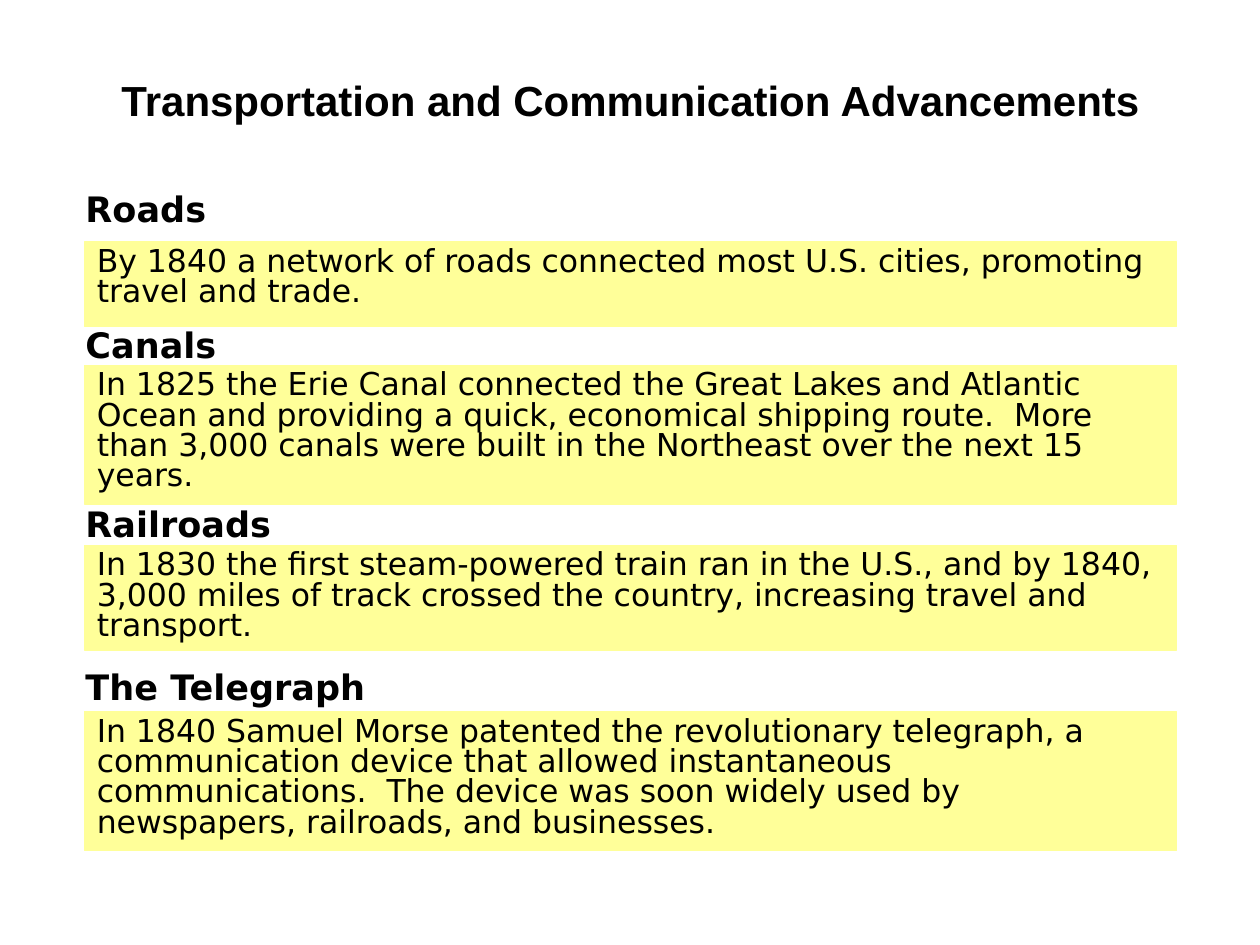
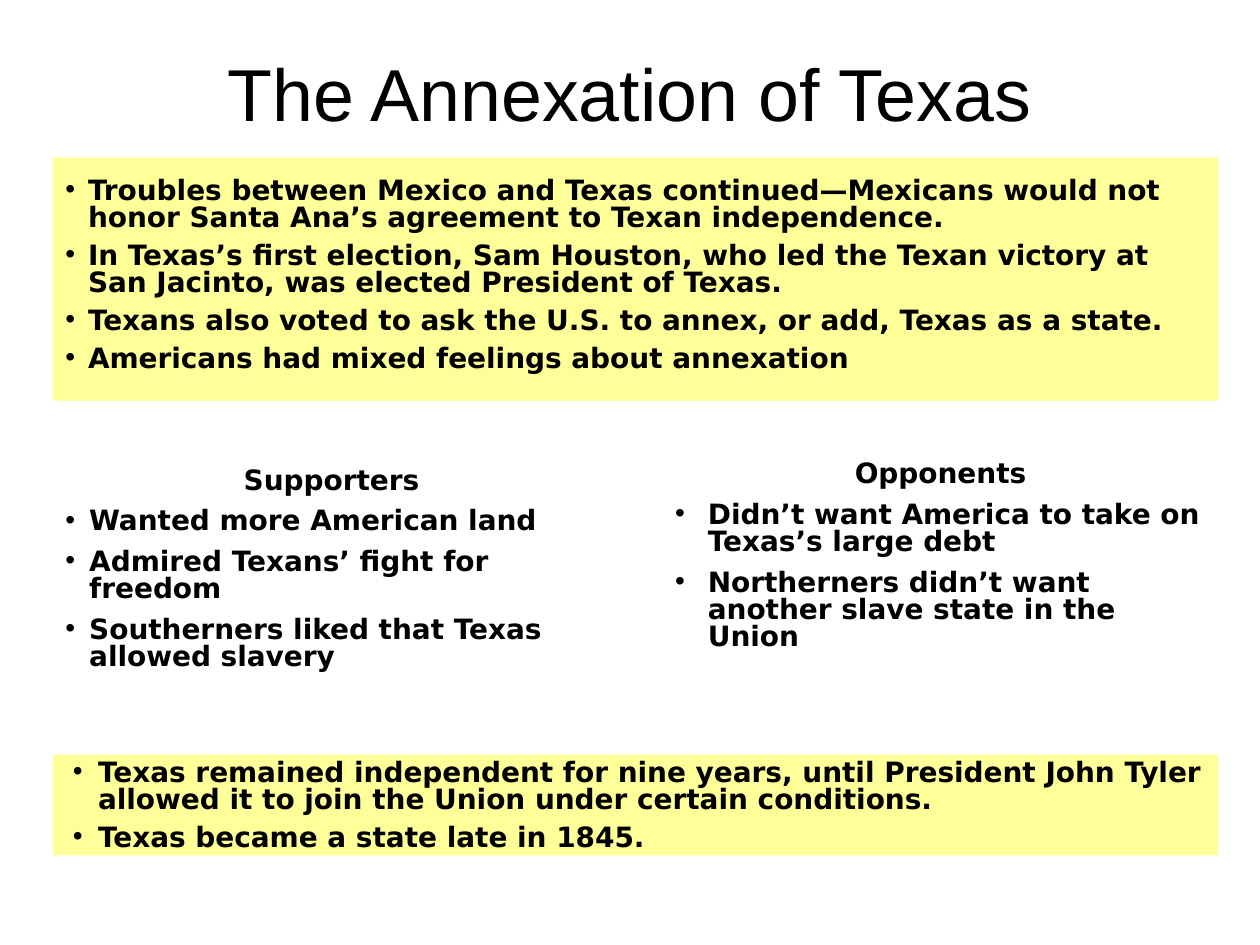
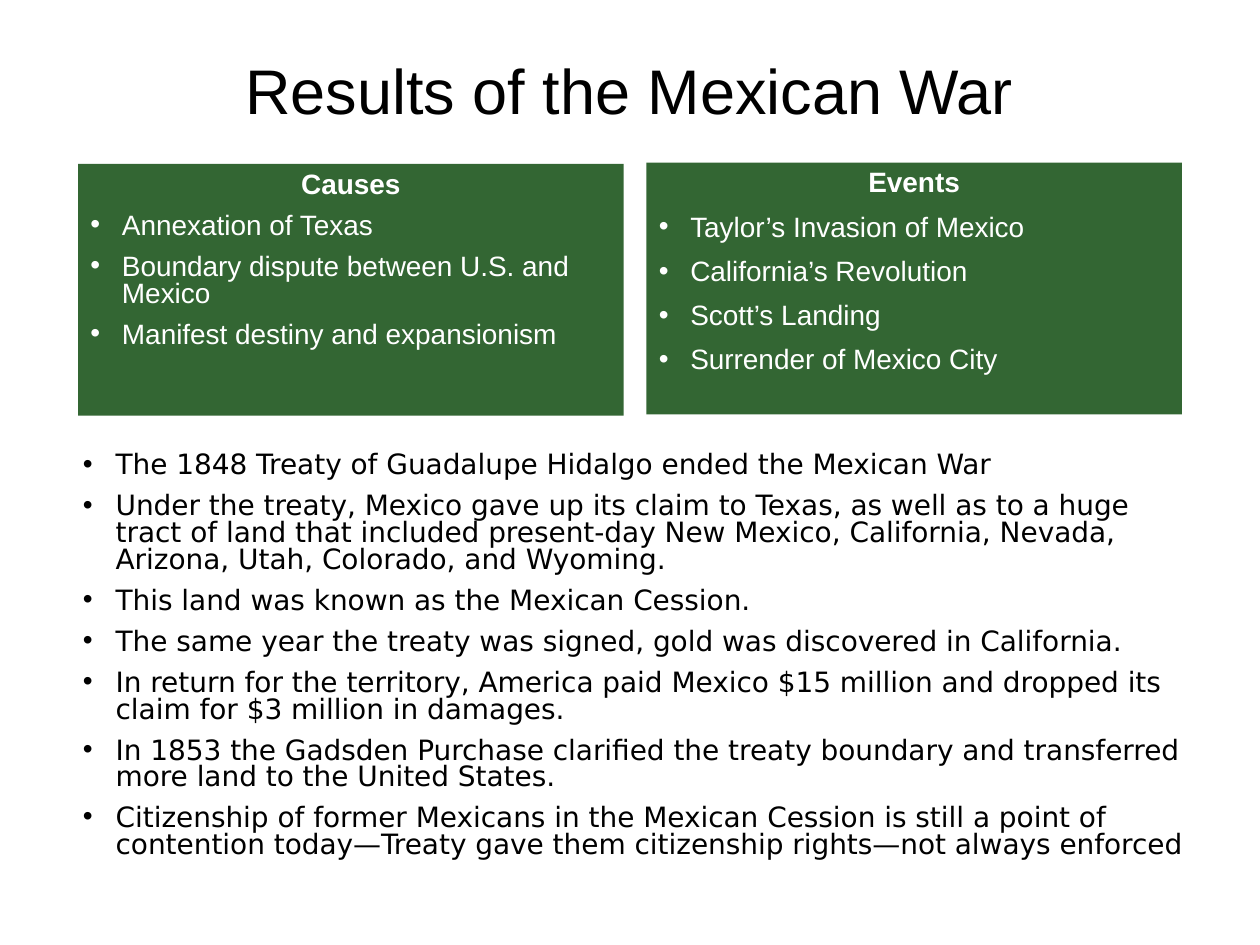
from dataclasses import dataclass

from lxml.etree import SubElement
from pptx import Presentation
from pptx.dml.color import RGBColor
from pptx.enum.shapes import MSO_SHAPE as Preset
from pptx.enum.text import MSO_ANCHOR as Anchor, PP_ALIGN as Align
from pptx.oxml.ns import qn
from pptx.util import Emu, Pt

EMU_PER_PX = 9144
BLACK = RGBColor(0, 0, 0)
WHITE = RGBColor(255, 255, 255)
YELLOW = RGBColor(0xFF, 0xFF, 0x99)
GREEN = RGBColor(0x33, 0x66, 0x33)
SANS = "DejaVu Sans"
ARIAL = "Arial"


@dataclass(frozen=True)
class Area:
    left: int
    top: int
    width: int
    height: int


@dataclass(frozen=True)
class Style:
    size: int
    font: str = SANS
    color: RGBColor = BLACK
    bold: bool = False
    align: Align = Align.LEFT
    line: float = 0.8
    gap: float = 0
    margin: int = 0
    hanging: int = 0
    bullet: bool = False


@dataclass(frozen=True)
class Line:
    text: str
    style: Style


@dataclass(frozen=True)
class Topic:
    heading: str
    heading_top: int
    body_top: int
    body_height: int
    body: str


def px(length: int) -> Emu:
    return Emu(length * EMU_PER_PX)


def write(shape, lines: list[Line], anchor: Anchor = Anchor.TOP) -> None:
    frame = shape.text_frame
    frame.word_wrap = True
    frame.vertical_anchor = anchor
    for index, line in enumerate(lines):
        style = line.style
        para = frame.add_paragraph() if index else frame.paragraphs[0]
        para.alignment = style.align
        para.line_spacing = style.line
        para.space_before = Pt(style.gap if index else 0)
        properties = para._p.get_or_add_pPr()
        properties.set("marL", str(px(style.margin)))
        properties.set("indent", str(px(-style.hanging)))
        if style.bullet:
            SubElement(properties, qn("a:buFont")).set("typeface", ARIAL)
            SubElement(properties, qn("a:buChar")).set("char", "•")
        span = para.add_run()
        span.text = line.text
        span.font.name = style.font
        span.font.size = Pt(style.size)
        span.font.bold = style.bold
        span.font.color.rgb = style.color


def add_text(page, area: Area, lines: list[Line], anchor: Anchor = Anchor.TOP) -> None:
    box = page.shapes.add_textbox(px(area.left), px(area.top), px(area.width), px(area.height))
    write(box, lines, anchor)


def add_panel(page, area: Area, fill: RGBColor, lines: list[Line], outlined: bool = False) -> None:
    panel = page.shapes.add_shape(
        Preset.RECTANGLE, px(area.left), px(area.top), px(area.width), px(area.height)
    )
    panel.shadow.inherit = False
    panel.fill.solid()
    panel.fill.fore_color.rgb = fill
    if outlined:
        panel.line.color.rgb = fill
        panel.line.width = Pt(0.75)
    else:
        panel.line.fill.background()
    write(panel, lines)


def add_title(page, area: Area, text: str, size: int, bold: bool = False,
              anchor: Anchor = Anchor.MIDDLE) -> None:
    style = Style(size, ARIAL, bold=bold, align=Align.CENTER, line=1.0)
    add_text(page, area, [Line(text, style)], anchor)


def styled(texts: list[str], style: Style) -> list[Line]:
    return [Line(text, style) for text in texts]


TOPIC_HEADING = Style(20, bold=True)
TOPIC_BODY = Style(18)
TEXAS_HEADING = Style(16, bold=True, align=Align.CENTER)
TEXAS_FACT = Style(16, bold=True, gap=6.4, margin=18, hanging=18, bullet=True)
TEXAS_OUTCOME = Style(16, bold=True, gap=6.4, margin=26, hanging=20, bullet=True)
SUPPORTER = Style(16, bold=True, gap=8, margin=19, hanging=19, bullet=True)
OPPONENT = Style(16, bold=True, gap=8, margin=26, hanging=26, bullet=True)
WAR_HEADING = Style(16, ARIAL, WHITE, True, Align.CENTER, 0.9)
CAUSE = Style(16, ARIAL, WHITE, gap=8, margin=25, hanging=25, bullet=True)
EVENT = Style(16, ARIAL, WHITE, line=0.9, gap=8, margin=25, hanging=25, bullet=True)
RESULT = Style(16, gap=8, margin=26, hanging=26, bullet=True)

TOPICS = [
    Topic("Roads", 150, 192, 67,
          "By 1840 a network of roads connected most U.S. cities, promoting travel and trade."),
    Topic("Canals", 258, 290, 110,
          "In 1825 the Erie Canal connected the Great Lakes and Atlantic Ocean and providing "
          "a quick, economical shipping route.  More than 3,000 canals were built in the "
          "Northeast over the next 15 years."),
    Topic("Railroads", 400, 433, 83,
          "In 1830 the first steam-powered train ran in the U.S., and by 1840, 3,000 miles of "
          "track crossed the country, increasing travel and transport."),
    Topic("The Telegraph", 530, 565, 110,
          "In 1840 Samuel Morse patented the revolutionary telegraph, a communication device "
          "that allowed instantaneous communications.  The device was soon widely used by "
          "newspapers, railroads, and businesses."),
]
TEXAS_FACTS = [
    "Troubles between Mexico and Texas continued—Mexicans would not honor Santa Ana’s "
    "agreement to Texan independence.",
    "In Texas’s first election, Sam Houston, who led the Texan victory at San Jacinto, "
    "was elected President of Texas.",
    "Texans also voted to ask the U.S. to annex, or add, Texas as a state.",
    "Americans had mixed feelings about annexation",
]
SUPPORTERS = [
    "Wanted more American land",
    "Admired Texans’ fight for freedom",
    "Southerners liked that Texas allowed slavery",
]
OPPONENTS = [
    "Didn’t want America to take on Texas’s large debt",
    "Northerners didn’t want another slave state in the Union",
]
TEXAS_OUTCOMES = [
    "Texas remained independent for nine years, until President John Tyler allowed it to "
    "join the Union under certain conditions.",
    "Texas became a state late in 1845.",
]
CAUSES = [
    "Annexation of Texas",
    "Boundary dispute between U.S. and Mexico",
    "Manifest destiny and expansionism",
]
EVENTS = [
    "Taylor’s Invasion of Mexico",
    "California’s Revolution",
    "Scott’s Landing",
    "Surrender of Mexico City",
]
RESULTS = [
    "The 1848 Treaty of Guadalupe Hidalgo ended the Mexican War",
    "Under the treaty, Mexico gave up its claim to Texas, as well as to a huge tract of land "
    "that included present-day New Mexico, California, Nevada, Arizona, Utah, Colorado, and "
    "Wyoming.",
    "This land was known as the Mexican Cession.",
    "The same year the treaty was signed, gold was discovered in California.",
    "In return for the territory, America paid Mexico $15 million and dropped its claim for "
    "$3 million in damages.",
    "In 1853 the Gadsden Purchase clarified the treaty boundary and transferred more land to "
    "the United States.",
    "Citizenship of former Mexicans in the Mexican Cession is still a point of contention "
    "today—Treaty gave them citizenship rights—not always enforced",
]


def build_advancements(page) -> None:
    add_title(page, Area(42, 33, 917, 93),
              "Transportation and Communication Advancements", 24, bold=True)
    for topic in TOPICS:
        add_text(page, Area(58, topic.heading_top, 825, 37), [Line(topic.heading, TOPIC_HEADING)])
        add_panel(page, Area(67, topic.body_top, 867, topic.body_height), YELLOW,
                  [Line(topic.body, TOPIC_BODY)], outlined=True)


def build_annexation(page) -> None:
    add_title(page, Area(58, 33, 883, 75), "The Annexation of Texas", 42, anchor=Anchor.TOP)
    add_panel(page, Area(42, 125, 925, 193), YELLOW, [])
    add_text(page, Area(42, 137, 925, 172), styled(TEXAS_FACTS, TEXAS_FACT))
    add_text(page, Area(42, 367, 450, 180),
             [Line("Supporters ", TEXAS_HEADING), *styled(SUPPORTERS, SUPPORTER)])
    add_text(page, Area(526, 362, 441, 166),
             [Line("Opponents", TEXAS_HEADING), *styled(OPPONENTS, OPPONENT)])
    add_panel(page, Area(42, 599, 925, 80), YELLOW, styled(TEXAS_OUTCOMES, TEXAS_OUTCOME))


def build_war_results(page) -> None:
    add_title(page, Area(58, 42, 883, 58), "Results of the Mexican War", 36)
    add_panel(page, Area(62, 130, 433, 200), GREEN,
              [Line("Causes", WAR_HEADING), *styled(CAUSES, CAUSE)])
    add_panel(page, Area(513, 129, 425, 200), GREEN,
              [Line("Events", WAR_HEADING), *styled(EVENTS, EVENT)])
    add_panel(page, Area(56, 355, 904, 349), WHITE, styled(RESULTS, RESULT))


def main() -> None:
    deck = Presentation()
    deck.slide_width, deck.slide_height = px(1000), px(750)
    for build in (build_advancements, build_annexation, build_war_results):
        build(deck.slides.add_slide(deck.slide_layouts[6]))
    deck.save("out.pptx")


if __name__ == "__main__":
    main()
